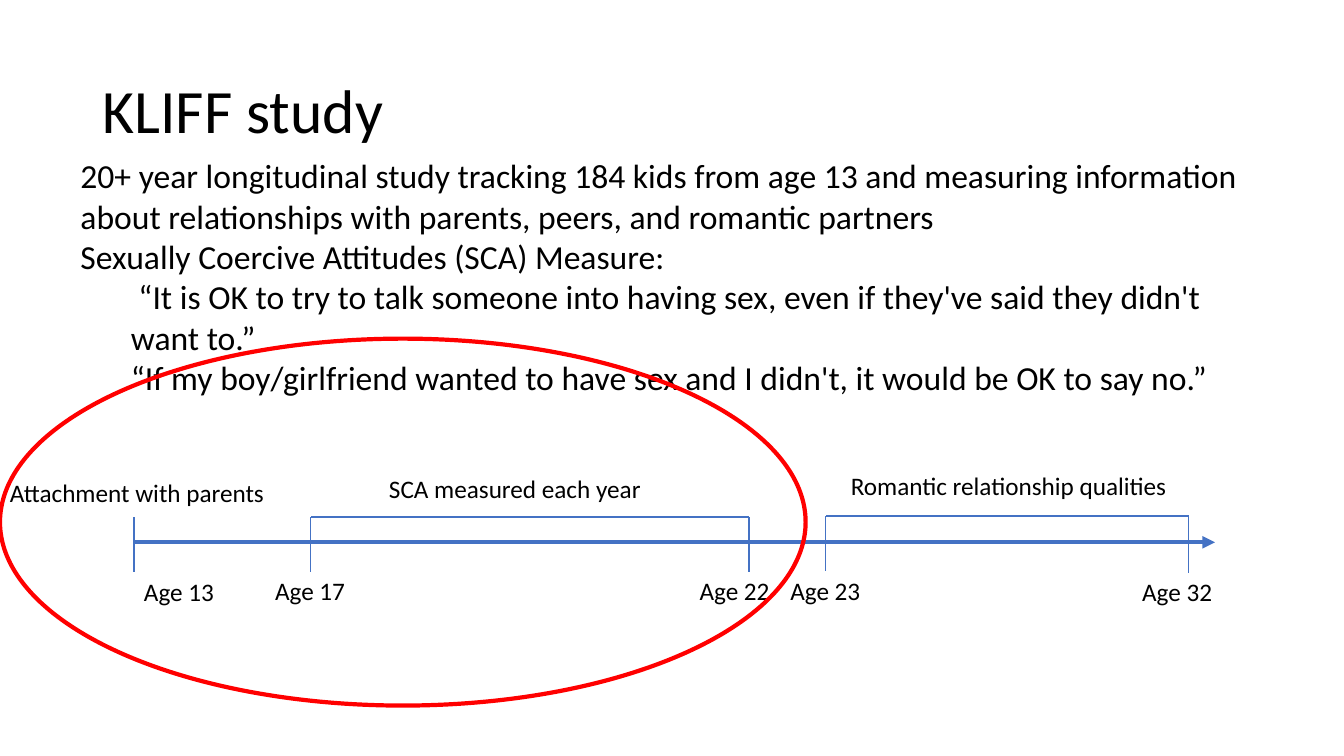
from dataclasses import dataclass

from lxml.etree import SubElement
from pptx import Presentation
from pptx.dml.color import RGBColor
from pptx.enum.shapes import MSO_CONNECTOR, MSO_SHAPE
from pptx.enum.text import MSO_ANCHOR, MSO_AUTO_SIZE
from pptx.oxml.ns import qn
from pptx.util import Inches, Pt

COLORS = {"text": "000000", "timeline": "4472C4", "highlight": "FF0000"}
FONT = "Calibri"
AXIS_Y = 5.38
LABEL_HEIGHT = 0.4


@dataclass
class Age:
    text: str
    label_left: float
    label_top: float
    tick_x: float
    tick_top: float
    tick_bottom: float


@dataclass
class Phase:
    text: str
    left: float
    top: float
    width: float


AGES = [
    Age("Age 13", 1.33, 5.67, 1.33, 5.13, 5.67),
    Age("Age 17", 2.63, 5.66, 3.08, 5.13, 5.67),
    Age("Age 22", 6.84, 5.66, 7.43, 5.13, 5.67),
    Age("Age 23", 7.74, 5.66, 8.19, 5.12, 5.66),
    Age("Age 32", 11.23, 5.67, 11.79, 5.12, 5.68),
]
PHASES = [
    Phase("Attachment with parents", 0, 4.69, 3.08),
    Phase("SCA measured each year", 3.76, 4.65, 2.94),
    Phase("Romantic relationship qualities", 8.34, 4.62, 3.56),
]
BRACKETS = [(AGES[1], AGES[2]), (AGES[3], AGES[4])]

# Each paragraph with its indent level
STUDY_DETAILS = [
    ("20+ year longitudinal study tracking 184 kids from age 13 and measuring "
     "information about relationships with parents, peers, and romantic partners", 0),
    ("Sexually Coercive Attitudes (SCA) Measure:", 0),
    (" “It is OK to try to talk someone into having sex, even if they've said "
     "they didn't want to.”", 1),
    ("“If my boy/girlfriend wanted to have sex and I didn't, it would be OK "
     "to say no.”", 1),
]


def add_text(slide, paragraphs: list[tuple[str, int]], left: float, top: float,
             width: float, height: float, *, size: float = 18, wrap: bool = True,
             grow: bool = True, anchor: MSO_ANCHOR = MSO_ANCHOR.TOP,
             line_spacing: float = 1.0) -> None:
    box = slide.shapes.add_textbox(Inches(left), Inches(top), Inches(width), Inches(height))
    frame = box.text_frame
    frame.word_wrap = wrap
    frame.auto_size = MSO_AUTO_SIZE.SHAPE_TO_FIT_TEXT if grow else MSO_AUTO_SIZE.NONE
    frame.vertical_anchor = anchor
    for index, (text, level) in enumerate(paragraphs):
        paragraph = frame.add_paragraph() if index else frame.paragraphs[0]
        paragraph.line_spacing = line_spacing
        if level:
            paragraph.level = level
            properties = paragraph._p.get_or_add_pPr()
            properties.set("marL", str(Inches(0.5 * level)))
            properties.set("indent", "0")
        run = paragraph.add_run()
        run.text = text
        run.font.name = FONT
        run.font.size = Pt(size)
        run.font.color.rgb = RGBColor.from_string(COLORS["text"])


def add_line(slide, x1: float, y1: float, x2: float, y2: float, *,
             weight: float = 1, arrow: bool = False) -> None:
    connector = slide.shapes.add_connector(
        MSO_CONNECTOR.STRAIGHT, Inches(x1), Inches(y1), Inches(x2), Inches(y2))
    connector.line.color.rgb = RGBColor.from_string(COLORS["timeline"])
    connector.line.width = Pt(weight)
    if arrow:
        SubElement(connector.line._get_or_add_ln(), qn("a:tailEnd"), type="triangle")
    SubElement(connector._element.spPr, qn("a:effectLst"))


def add_highlight(slide, left: float, top: float, width: float, height: float) -> None:
    ellipse = slide.shapes.add_shape(
        MSO_SHAPE.OVAL, Inches(left), Inches(top), Inches(width), Inches(height))
    ellipse.shadow.inherit = False
    ellipse.fill.background()
    ellipse.line.color.rgb = RGBColor.from_string(COLORS["highlight"])
    ellipse.line.width = Pt(3)


def main() -> None:
    presentation = Presentation()
    presentation.slide_width = Inches(13.33)
    presentation.slide_height = Inches(7.5)
    slide = presentation.slides.add_slide(presentation.slide_layouts[6])

    # Title
    add_text(slide, [("KLIFF study", 0)], 0.92, 0.4, 11.5, 1.45, size=44,
             grow=False, anchor=MSO_ANCHOR.MIDDLE, line_spacing=0.9)

    # Timeline with its ages
    add_line(slide, AGES[0].tick_x, AXIS_Y, 12.05, AXIS_Y, weight=3, arrow=True)
    for age in AGES:
        add_line(slide, age.tick_x, age.tick_top, age.tick_x, age.tick_bottom)
        add_text(slide, [(age.text, 0)], age.label_left, age.label_top,
                 0.9, LABEL_HEIGHT, wrap=False)

    # Measurement phases
    for start, end in BRACKETS:
        add_line(slide, end.tick_x, end.tick_top, start.tick_x, start.tick_top)
    for phase in PHASES:
        add_text(slide, [(phase.text, 0)], phase.left, phase.top, phase.width, LABEL_HEIGHT)

    # Study description
    add_text(slide, STUDY_DETAILS, 0.7, 1.49, 11.97, 2.52, size=24)

    # Highlight around the early phases
    add_highlight(slide, 0, 3.36, 7.99, 3.64)

    presentation.save("out.pptx")


if __name__ == "__main__":
    main()
